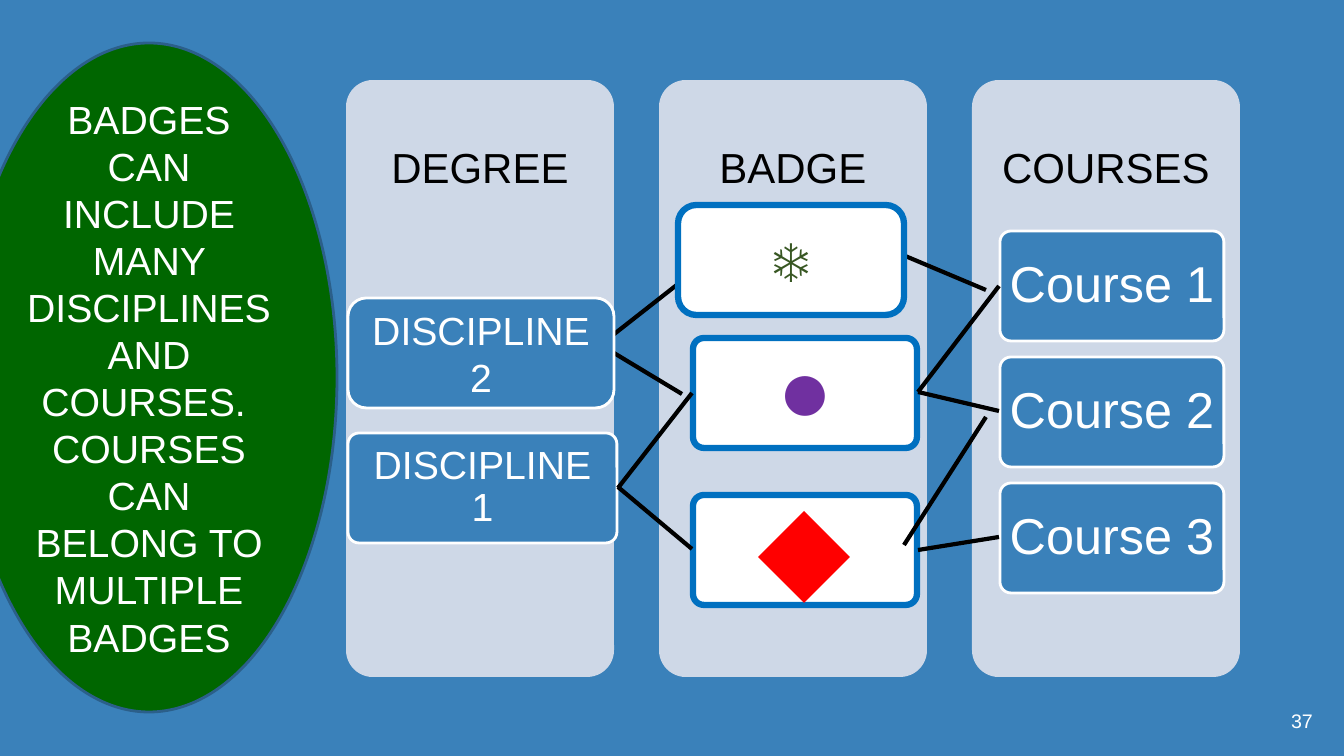
from lxml.etree import SubElement
from pptx import Presentation
from pptx.dml.color import RGBColor
from pptx.enum.shapes import MSO_CONNECTOR as Connector, MSO_SHAPE as Shape
from pptx.enum.text import MSO_ANCHOR as Anchor, PP_ALIGN as Align
from pptx.oxml.ns import qn
from pptx.util import Emu, Pt

EMU_PER_PX = 914400 / 100.8
BLUE, PALE, WHITE, BLACK = "3A81BA", "CED8E7", "FFFFFF", "000000"
BADGE_EDGE = "0070C0"


def px(length):
    return Emu(round(length * EMU_PER_PX))


def colour(hex_code):
    return RGBColor.from_string(hex_code)


class Diagram:
    font = "Arial"

    def __init__(self, slide):
        self.slide = slide
        slide.background.fill.solid()
        slide.background.fill.fore_color.rgb = colour(BLUE)

    def set_text(self, frame, text, size, ink, insets=(10, 5), spacing=None,
                 anchor=Anchor.MIDDLE):
        frame.word_wrap = True
        frame.vertical_anchor = anchor
        frame.margin_left = frame.margin_right = px(insets[0])
        frame.margin_top = frame.margin_bottom = px(insets[1])
        frame.text = text
        for paragraph in frame.paragraphs:
            paragraph.alignment = Align.CENTER
            paragraph.line_spacing = spacing
            for run in paragraph.runs:
                run.font.name = self.font
                run.font.size = Pt(size)
                run.font.color.rgb = colour(ink)

    def shape(self, kind, box, fill, edge=None, width=2, corner=None):
        shape = self.slide.shapes.add_shape(kind, *map(px, box))
        shape.shadow.inherit = False
        shape.fill.solid()
        shape.fill.fore_color.rgb = colour(fill)
        if edge:
            shape.line.color.rgb = colour(edge)
            shape.line.width = Pt(width)
        else:
            shape.line.fill.background()
        if corner:
            shape.adjustments[0] = corner
        return shape.text_frame

    def label(self, box, text, size, ink, **style):
        frame = self.slide.shapes.add_textbox(*map(px, box)).text_frame
        self.set_text(frame, text, size, ink, **style)

    def link(self, *ends):
        line = self.slide.shapes.add_connector(Connector.STRAIGHT, *map(px, ends))
        line.line.color.rgb = colour(BLACK)
        line.line.width = Pt(3)
        SubElement(line._element.spPr, qn("a:effectLst"))


def main():
    deck = Presentation()
    deck.slide_width, deck.slide_height = px(1344), px(756)
    diagram = Diagram(deck.slides.add_slide(deck.slide_layouts[6]))

    # Column panels with headings
    for column, heading in enumerate(("DEGREE", "BADGE", "COURSES")):
        left = 346 + 313 * column
        diagram.shape(Shape.ROUNDED_RECTANGLE, (left, 80, 268, 597), PALE, corner=0.1)
        diagram.label((left, 80, 268, 179), heading, 30, BLACK,
                      insets=(23, 23), spacing=0.9)

    # Lower discipline
    discipline = diagram.shape(Shape.ROUNDED_RECTANGLE, (348, 433, 269, 110),
                               BLUE, WHITE, corner=0.1)
    diagram.set_text(discipline, "DISCIPLINE 1", 28, WHITE, insets=(16, 2), spacing=0.9)

    # Lower badges
    for top, symbol, size, ink in ((338, "●", 66, "7030A0"), (495, "⬥", 96, "FF0000")):
        badge = diagram.shape(Shape.ROUNDED_RECTANGLE, (693, top, 224, 110),
                              WHITE, BADGE_EDGE, 4.5, corner=0.1)
        diagram.set_text(badge, symbol, size, ink, insets=(5, 5), spacing=0.9)

    # Courses
    for row in range(3):
        course = diagram.shape(Shape.ROUNDED_RECTANGLE, (1000, 231 + 126 * row, 224, 110),
                               BLUE, WHITE, corner=0.1)
        diagram.set_text(course, f"Course {row + 1}", 36, WHITE, insets=(3, 3), spacing=0.9)

    # Links from disciplines to badges, then from badges to courses
    for ends in ((618, 488, 692, 393), (618, 487, 692, 549),
                 (682, 394, 614, 353), (678, 284, 590, 353),
                 (918, 392, 999, 286), (918, 392, 999, 411),
                 (918, 550, 999, 537), (986, 417, 904, 545), (986, 290, 891, 250)):
        diagram.link(*ends)

    # Upper discipline and badge, covering the link ends
    discipline = diagram.shape(Shape.ROUNDED_RECTANGLE, (348, 298, 266, 110), BLUE, WHITE)
    diagram.set_text(discipline, "DISCIPLINE 2", 28, WHITE)
    badge = diagram.shape(Shape.ROUNDED_RECTANGLE, (678, 205, 226, 110),
                          WHITE, BADGE_EDGE, 4.5)
    diagram.set_text(badge, "❄", 40, "385723")

    # Key message
    message = diagram.shape(Shape.OVAL, (-39, 43, 376, 669), "006600", "2B5F8A")
    diagram.set_text(message, "BADGES CAN INCLUDE MANY DISCIPLINES AND COURSES. \n"
                     "COURSES CAN BELONG TO MULTIPLE BADGES", 28, WHITE)

    # Slide number
    diagram.label((1273, 704, 58, 40), "37", 14, WHITE, anchor=Anchor.TOP)

    deck.save("out.pptx")


if __name__ == "__main__":
    main()
